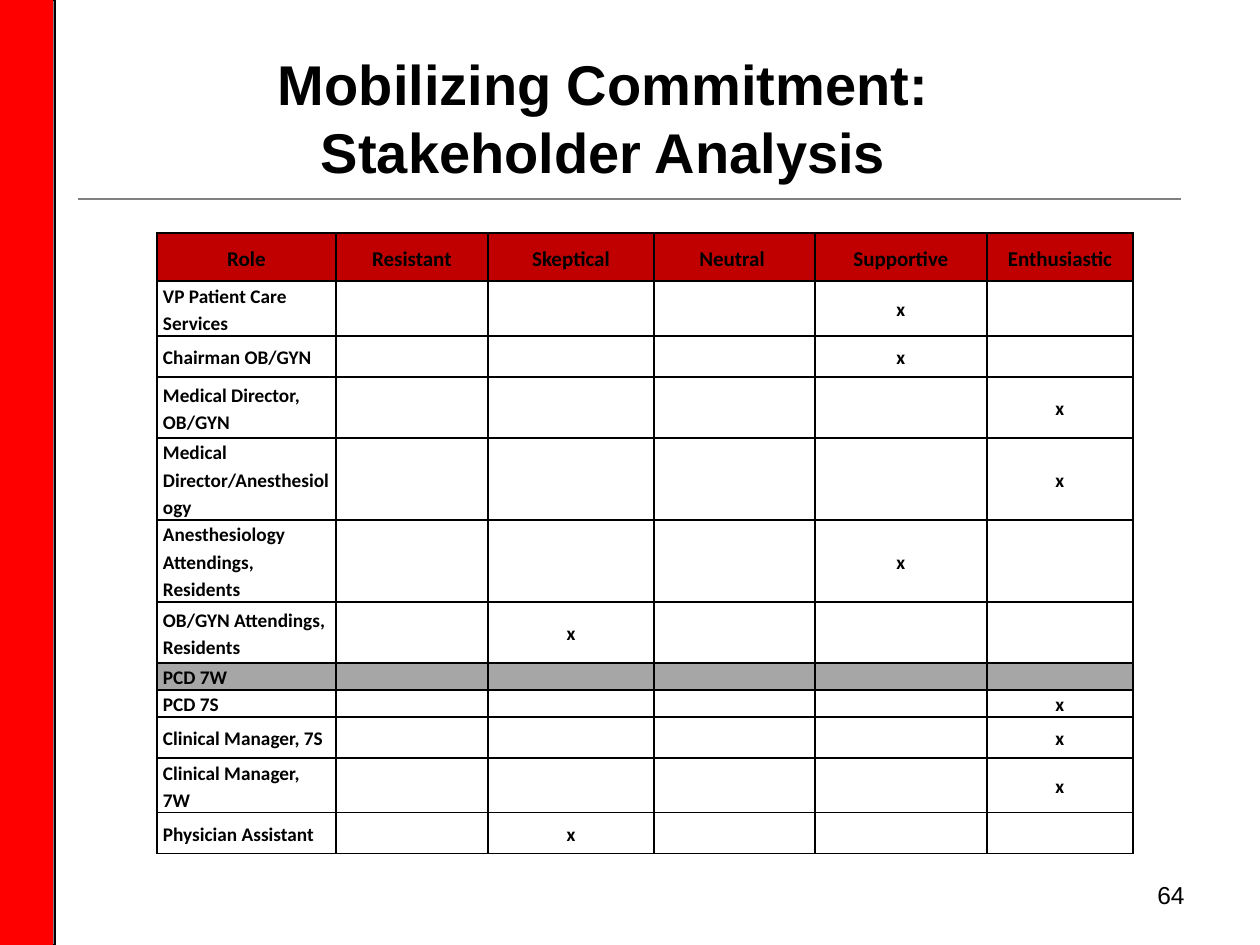
from lxml import etree
from pptx import Presentation
from pptx import util as u
from pptx.dml.color import RGBColor
from pptx.enum import shapes, text
from pptx.oxml import parse_xml
from pptx.oxml.ns import nsdecls, qn

BLACK = RGBColor(0, 0, 0)
GRAY = RGBColor(0x80, 0x80, 0x80)
RED = RGBColor(0xFF, 0, 0)
HEADER_RED = RGBColor(0xC0, 0, 0)
ROW_GRAY = RGBColor(0xA6, 0xA6, 0xA6)

LEVELS = ["Resistant", "Skeptical", "Neutral ", "Supportive", "Enthusiastic"]
# role, marked level (None when unrated), row height
STAKEHOLDERS = [
    ("VP Patient Care Services", "Supportive", 55),
    ("Chairman OB/GYN", "Supportive", 41),
    ("Medical Director, OB/GYN", "Enthusiastic", 61),
    ("Medical Director/Anesthesiology", "Enthusiastic", 82),
    ("Anesthesiology Attendings, Residents", "Supportive", 82),
    ("OB/GYN Attendings, Residents", "Skeptical", 61),
    ("PCD 7W", None, 27),
    ("PCD 7S", "Enthusiastic", 27),
    ("Clinical Manager, 7S", "Enthusiastic", 41),
    ("Clinical Manager, 7W", "Enthusiastic", 55),
    ("Physician Assistant", "Skeptical", 41),
]
HEADER_HEIGHT = 48
COLUMN_WIDTHS = [179, 152, 166, 161, 172, 146]


def px(count):
    return u.Emu(round(count * 914400 / 126))


def write(frame, words, font="Arial", size=14, bold=False,
          align=text.PP_ALIGN.LEFT, spacing=None):
    para = frame.paragraphs[0]
    para.text = words
    para.alignment = align
    para.line_spacing = spacing
    for span in para.runs:
        span.font.name = font
        span.font.size = u.Pt(size)
        span.font.bold = bold
        span.font.color.rgb = BLACK
    if not words:
        # keeps an empty cell as low as a filled one
        para._p.get_or_add_endParaRPr().set("sz", str(size * 100))


def add_borders(cell):
    properties = cell._tc.get_or_add_tcPr()
    for index, side in enumerate(("lnL", "lnR", "lnT", "lnB")):
        properties.insert(index, parse_xml(
            f'<a:{side} {nsdecls("a")} w="12700"><a:solidFill>'
            f'<a:srgbClr val="{BLACK}"/></a:solidFill></a:{side}>'))


class Slide:
    def __init__(self, deck):
        self.page = deck.slides.add_slide(deck.slide_layouts[6])

    def rectangle(self, left, top, width, height, fill, line=None):
        box = self.page.shapes.add_shape(
            shapes.MSO_SHAPE.RECTANGLE, px(left), px(top), px(width), px(height))
        box.shadow.inherit = False
        box.fill.solid()
        box.fill.fore_color.rgb = fill
        if line is None:
            box.line.fill.background()
        else:
            box.line.color.rgb = line
            box.line.width = u.Pt(0.75)

    def rule(self, left, right, y, color):
        line = self.page.shapes.add_connector(
            shapes.MSO_CONNECTOR.STRAIGHT, px(left), px(y), px(right), px(y))
        line.line.color.rgb = color
        line.line.width = u.Pt(0.75)
        etree.SubElement(line._element.spPr, qn("a:effectLst"))

    def textbox(self, left, top, width, height, words,
                anchor=text.MSO_ANCHOR.TOP, **style):
        box = self.page.shapes.add_textbox(px(left), px(top), px(width), px(height))
        box.text_frame.word_wrap = True
        box.text_frame.vertical_anchor = anchor
        write(box.text_frame, words, **style)

    def cell(self, cell, words, fill=None, **style):
        cell.vertical_anchor = text.MSO_ANCHOR.MIDDLE
        cell.margin_left = cell.margin_right = px(6)
        cell.margin_top = cell.margin_bottom = 0
        if fill is None:
            cell.fill.background()
        else:
            cell.fill.solid()
            cell.fill.fore_color.rgb = fill
        add_borders(cell)
        write(cell.text_frame, words, font="Calibri", bold=True, spacing=1.15, **style)

    def stakeholder_table(self, left, top):
        heights = [HEADER_HEIGHT] + [height for _, _, height in STAKEHOLDERS]
        table = self.page.shapes.add_table(
            len(heights), len(COLUMN_WIDTHS), px(left), px(top),
            px(sum(COLUMN_WIDTHS)), px(sum(heights))).table
        table.horz_banding = False
        for column, width in zip(table.columns, COLUMN_WIDTHS):
            column.width = px(width)
        for row, height in zip(table.rows, heights):
            row.height = px(height)

        center = text.PP_ALIGN.CENTER
        for column, heading in enumerate(["Role"] + LEVELS):
            self.cell(table.cell(0, column), heading, HEADER_RED, size=12, align=center)
        for row, (role, mark, _) in enumerate(STAKEHOLDERS, 1):
            fill = ROW_GRAY if mark is None else None
            self.cell(table.cell(row, 0), role, fill, size=11)
            for column, level in enumerate(LEVELS, 1):
                self.cell(table.cell(row, column), "x" if level == mark else "",
                          fill, size=11, align=center)


def main():
    deck = Presentation()
    deck.slide_width, deck.slide_height = px(1260), px(945)
    slide = Slide(deck)
    slide.rectangle(45, 0, 10, 945, GRAY, line=BLACK)
    slide.rectangle(0, 0, 53, 945, RED)
    slide.rule(78, 1181, 199, GRAY)
    slide.textbox(63, 38, 1081, 158, "Mobilizing Commitment:\nStakeholder Analysis",
                  anchor=text.MSO_ANCHOR.MIDDLE, size=32, bold=True,
                  align=text.PP_ALIGN.CENTER)
    slide.stakeholder_table(157, 233)
    slide.textbox(1113, 874, 84, 50, "64", align=text.PP_ALIGN.RIGHT)
    deck.save("out.pptx")


if __name__ == "__main__":
    main()
